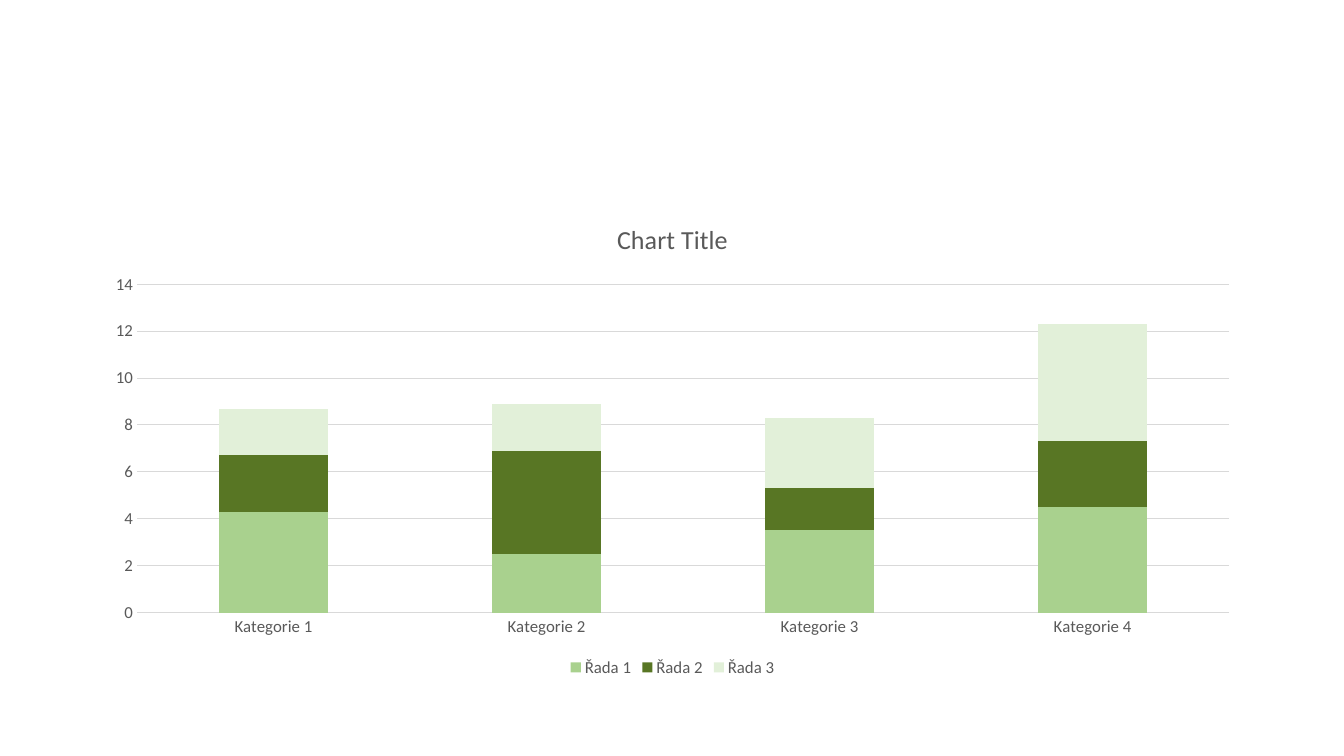
from pptx import Presentation
from pptx import util as u
from pptx.chart.data import CategoryChartData
from pptx.dml.color import RGBColor
from pptx.enum import chart as ch

GREY = RGBColor(0x59, 0x59, 0x59)
RULE = RGBColor(0xD9, 0xD9, 0xD9)
WHITE = RGBColor(0xFF, 0xFF, 0xFF)
LIME = RGBColor(0xA9, 0xD1, 0x8E)
MOSS = RGBColor(0x58, 0x76, 0x24)
MINT = RGBColor(0xE2, 0xF0, 0xD9)

WIDE, HIGH = u.Inches(13.33), u.Inches(7.5)
CATS = [f"Kategorie {n}" for n in range(1, 5)]
ROWS = [
    ("Řada 1", (4.3, 2.5, 3.5, 4.5), LIME),
    ("Řada 2", (2.4, 4.4, 1.8, 2.8), MOSS),
    ("Řada 3", (2, 2, 3, 5), MINT),
]


def style(font, size=12, color=GREY, name="Calibri"):
    font.size = u.Pt(size)
    font.bold = False
    font.name = name
    font.color.rgb = color


def write(frame, words, **form):
    frame.text = words
    style(frame.paragraphs[0].runs[0].font, **form)


def plain(axis):
    """Strip an axis of its line and ticks, and set its labels."""
    axis.major_tick_mark = axis.minor_tick_mark = ch.XL_TICK_MARK.NONE
    axis.format.line.fill.background()
    style(axis.tick_labels.font)


def stack(slide, left, top, width, height):
    """Place the stacked columns in a box given as shares of the slide."""
    data = CategoryChartData(number_format="General")
    data.categories = CATS
    for name, vals, _ in ROWS:
        data.add_series(name, vals)
    chart = slide.shapes.add_chart(
        ch.XL_CHART_TYPE.COLUMN_STACKED,
        int(left * WIDE), int(top * HIGH),
        int(width * WIDE), int(height * HIGH), data).chart
    style(chart.font)

    chart.has_title = True
    write(chart.chart_title.text_frame, "Chart Title", size=18.6)
    chart.chart_title.include_in_layout = False

    chart.has_legend = True
    chart.legend.position = ch.XL_LEGEND_POSITION.BOTTOM
    chart.legend.include_in_layout = False
    style(chart.legend.font)

    plot = chart.plots[0]
    plot.gap_width, plot.overlap = 150, 100
    plot.vary_by_categories = False
    for series, (_, _, color) in zip(plot.series, ROWS):
        series.format.fill.solid()
        series.format.fill.fore_color.rgb = color

    plain(chart.category_axis)
    axis = chart.value_axis
    plain(axis)
    axis.minimum_scale, axis.maximum_scale, axis.major_unit = 0, 14, 2
    grid = axis.major_gridlines.format.line
    grid.color.rgb = RULE
    grid.width = u.Pt(0.75)


def main():
    deck = Presentation()
    deck.slide_width, deck.slide_height = WIDE, HIGH
    slide = deck.slides.add_slide(deck.slide_layouts[6])
    slide.background.fill.solid()
    slide.background.fill.fore_color.rgb = WHITE
    stack(slide, 0.92 / 13.33, 2 / 7.5, 11.5 / 13.33, 4.76 / 7.5)
    deck.save("out.pptx")


if __name__ == "__main__":
    main()
